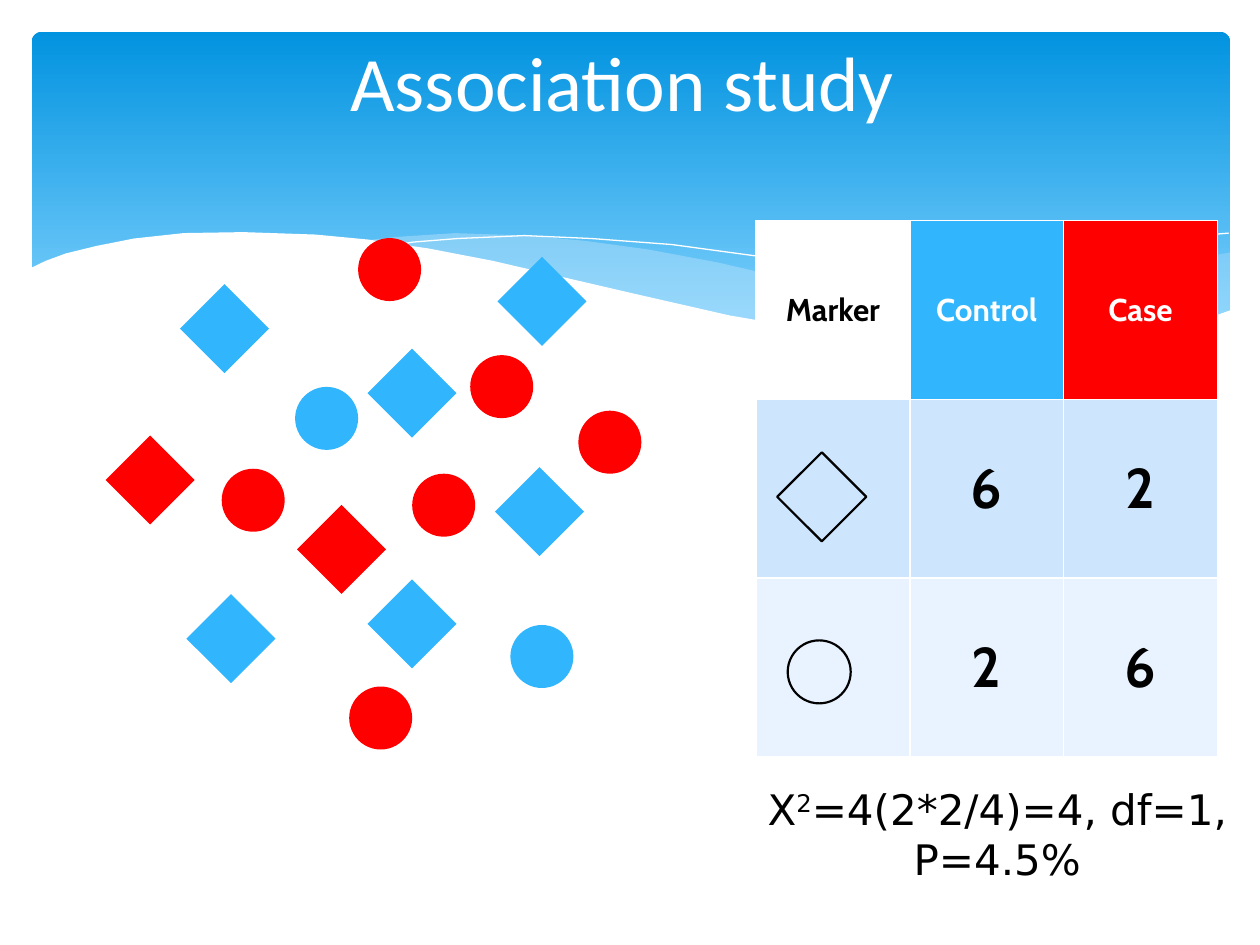
import dataclasses

import pptx
import pptx.dml.color
import pptx.enum.shapes
import pptx.enum.text
import pptx.oxml
import pptx.oxml.ns
import pptx.util
from pptx.util import Cm


@dataclasses.dataclass(frozen=True)
class Theme:
    """Colours, fonts and type sizes of the slide."""
    white: str = "FFFFFF"
    black: str = "000000"
    control: str = "31B6FD"
    case: str = "FF0000"
    sky_top: str = "0293E0"
    sky_bottom: str = "83D3FE"
    wave: str = "C6E7FC"
    row_dark: str = "CEE5FE"
    row_light: str = "E8F3FF"
    title_font: str = "Calibri"
    table_font: str = "Cabin"
    formula_font: str = "DejaVu Sans"
    title_size: int = 44
    header_size: int = 18
    count_size: int = 32
    formula_size: int = 24


THEME = Theme()
MARKER_SIZE = 1.27
DIAMOND = pptx.enum.shapes.MSO_SHAPE.RECTANGLE
CIRCLE = pptx.enum.shapes.MSO_SHAPE.OVAL

BACK_WAVE = [
    (24.16, 4.45), (22.76, 4.7), (21.23, 5.03), (19.15, 5.51), (17.3, 5.89), (16.15, 6.1),
    (17.27, 6.25), (18.59, 6.38), (20.04, 6.43), (21.51, 6.32), (22.76, 6.1), (24.16, 5.64)]
MIDDLE_WAVE = [
    (22.05, 6.3), (20.62, 6.1), (19.05, 5.82), (17.3, 5.46), (15.34, 5), (13.82, 4.65),
    (12.42, 4.39), (11.18, 4.22), (10.03, 4.11), (8.53, 4.06), (7.32, 4.14), (6.63, 4.22),
    (8.05, 4.42), (9.63, 4.72), (10.77, 5), (12.83, 5.46), (14.63, 5.84), (16.26, 6.12),
    (17.7, 6.32), (19.3, 6.43), (20.65, 6.43)]
FALLING_LINE = [
    (7.21, 4.32), (7.7, 4.24), (8.59, 4.17), (9.93, 4.11), (11.28, 4.17), (12.9, 4.29),
    (14.81, 4.55), (17.02, 4.93), (19.56, 5.49), (22.4, 6.27)]
RISING_LINE = [
    (14.94, 5.89), (16.43, 5.49), (18.36, 5.03), (20.6, 4.55), (22.1, 4.29), (23.19, 4.14),
    (24.13, 4.06)]
FRONT_WAVE = [
    (24.18, 5.61), (23.24, 5.94), (22.2, 6.2), (20.96, 6.35), (19.91, 6.4), (18.69, 6.35),
    (17.35, 6.22), (15.82, 6.02), (14.07, 5.72), (12.14, 5.28), (10.72, 4.95), (9.3, 4.62),
    (8, 4.37), (6.78, 4.19), (5.72, 4.09), (4.27, 4.04), (3.07, 4.06), (2.06, 4.17),
    (1.3, 4.32), (0.69, 4.47), (0.28, 4.62), (-0.05, 4.78), (-0.05, 7.72), (24.18, 7.72)]

SAMPLES = [
    (CIRCLE, THEME.control, 7.9, 7.8), (DIAMOND, THEME.control, 7.9, 0.64),
    (CIRCLE, THEME.case, 4.65, 9.04), (DIAMOND, THEME.case, 3.86, 5.64),
    (DIAMOND, THEME.control, 7.85, 4.88), (CIRCLE, THEME.case, 5.92, 4.75),
    (DIAMOND, THEME.control, 1.63, 7.44), (CIRCLE, THEME.case, 4.83, 0),
    (DIAMOND, THEME.control, 1.5, 1.19), (CIRCLE, THEME.case, 7.09, 2.36),
    (CIRCLE, THEME.control, 3.56, 3), (DIAMOND, THEME.case, 0, 4.24),
    (DIAMOND, THEME.control, 5.28, 7.14), (CIRCLE, THEME.case, 2.08, 4.65),
    (DIAMOND, THEME.control, 5.28, 2.49), (CIRCLE, THEME.case, 9.27, 3.48)]


def rgb(value):
    """Return the colour object for a hex value."""
    return pptx.dml.color.RGBColor.from_string(value)


def paint(shape, fill=None, line=None, width=0, opacity=None):
    """Give a shape its fill and line, and no shadow."""
    shape.shadow.inherit = False
    if fill:
        shape.fill.solid()
        shape.fill.fore_color.rgb = rgb(fill)
    else:
        shape.fill.background()
    if opacity:
        color = shape.fill._xPr.find(".//" + pptx.oxml.ns.qn("a:srgbClr"))
        alpha = pptx.oxml.parse_xml(
            f'<a:alpha {pptx.oxml.ns.nsdecls("a")} val="{opacity * 1000}"/>')
        color.append(alpha)
    if line:
        shape.line.color.rgb = rgb(line)
        shape.line.width = pptx.util.Pt(width)
    else:
        shape.line.fill.background()


def format_text(text_frame, font, size, color, bold=False):
    """Centre the paragraphs and format all their runs."""
    for paragraph in text_frame.paragraphs:
        paragraph.alignment = pptx.enum.text.PP_ALIGN.CENTER
        for run in paragraph.runs:
            run.font.name = font
            run.font.size = pptx.util.Pt(size)
            run.font.bold = bold
            run.font.color.rgb = rgb(color)


def add_curve(slide, left, top, points, close):
    """Draw a freeform through points relative to left and top."""
    placed = [(Cm(left + x), Cm(top + y)) for x, y in points]
    builder = slide.shapes.build_freeform(*placed[0], scale=1.0)
    builder.add_line_segments(placed[1:], close=close)
    return builder.convert_to_shape()


def add_banner(slide, left, top, width, height):
    """Draw the gradient banner with its waves."""
    banner = slide.shapes.add_shape(
        pptx.enum.shapes.MSO_SHAPE.ROUNDED_RECTANGLE, Cm(left), Cm(top), Cm(width), Cm(height))
    banner.adjustments[0] = 0.03
    paint(banner)
    banner.fill.gradient()
    banner.fill.gradient_angle = 270
    stops = [(0, THEME.sky_top), (0.9, THEME.sky_bottom)]
    for stop, (position, color) in zip(banner.fill.gradient_stops, stops):
        stop.position = position
        stop.color.rgb = rgb(color)
    for points, opacity in ((BACK_WAVE, 29), (MIDDLE_WAVE, 40)):
        paint(add_curve(slide, left, top, points, True), THEME.wave, opacity=opacity)
    for points in (FALLING_LINE, RISING_LINE):
        paint(add_curve(slide, left, top, points, False), line=THEME.white)
    paint(add_curve(slide, left, top, FRONT_WAVE, True), THEME.white)


def add_title(slide, left, top, width, height):
    """Place the title placeholder in front of the banner."""
    title = slide.shapes.title
    title.left, title.top, title.width, title.height = map(Cm, (left, top, width, height))
    title.text_frame.text = "Association study"
    title.text_frame.vertical_anchor = pptx.enum.text.MSO_ANCHOR.MIDDLE
    format_text(title.text_frame, THEME.title_font, THEME.title_size, THEME.white)
    slide.shapes._spTree.append(title._element)


def add_marker(slide, kind, left, top, **style):
    """Draw one circle or diamond marker."""
    marker = slide.shapes.add_shape(kind, Cm(left), Cm(top), Cm(MARKER_SIZE), Cm(MARKER_SIZE))
    marker.rotation = 135 if kind == DIAMOND else 0
    paint(marker, **style)


def add_samples(slide, left, top):
    """Scatter the case and control samples."""
    for kind, color, x, y in SAMPLES:
        add_marker(slide, kind, left + x, top + y, fill=color)


def add_counts(slide, left, top, width, height):
    """Build the table of marker counts with its marker symbols."""
    rows = [("Marker", "Control", "Case"), ("", "6", "2"), ("", "2", "6")]
    fills = [(THEME.white, THEME.control, THEME.case),
             (THEME.row_dark,) * 3, (THEME.row_light,) * 3]
    table = slide.shapes.add_table(3, 3, Cm(left), Cm(top), Cm(width), Cm(height)).table
    for r, (texts, colors) in enumerate(zip(rows, fills)):
        for c, (text, fill) in enumerate(zip(texts, colors)):
            cell = table.cell(r, c)
            cell.fill.solid()
            cell.fill.fore_color.rgb = rgb(fill)
            cell.vertical_anchor = pptx.enum.text.MSO_ANCHOR.MIDDLE
            cell.text_frame.text = text
            color = THEME.white if r == 0 and c > 0 else THEME.black
            size = THEME.count_size if r else THEME.header_size
            format_text(cell.text_frame, THEME.table_font, size, color, bold=True)
    for kind, x, y in ((DIAMOND, 0.69, 4.93), (CIRCLE, 0.64, 8.46)):
        add_marker(slide, kind, left + x, top + y, line=THEME.black, width=1.25)


def add_formula(slide, left, top, width, height):
    """Write the test result below the table."""
    text_frame = slide.shapes.add_textbox(Cm(left), Cm(top), Cm(width), Cm(height)).text_frame
    text_frame.word_wrap = True
    paragraph = text_frame.paragraphs[0]
    for text in ("X", "2", "=4(2*2/4)=4, df=1, P=4.5%"):
        paragraph.add_run().text = text
    format_text(text_frame, THEME.formula_font, THEME.formula_size, THEME.black)
    paragraph.runs[1].font._element.set("baseline", "30000")


def main():
    """Build and save the presentation."""
    presentation = pptx.Presentation()
    presentation.slide_width, presentation.slide_height = Cm(25.4), Cm(19.05)
    slide = presentation.slides.add_slide(presentation.slide_layouts[5])
    add_banner(slide, 0.64, 0.64, 24.16, 6.86)
    add_title(slide, 1.12, 0.03, 22.86, 3.18)
    add_counts(slide, 15.24, 4.45, 9.3, 10.8)
    add_samples(slide, 2.39, 4.8)
    add_formula(slide, 14.81, 15.67, 10.59, 2.31)
    presentation.save("out.pptx")


if __name__ == "__main__":
    main()
